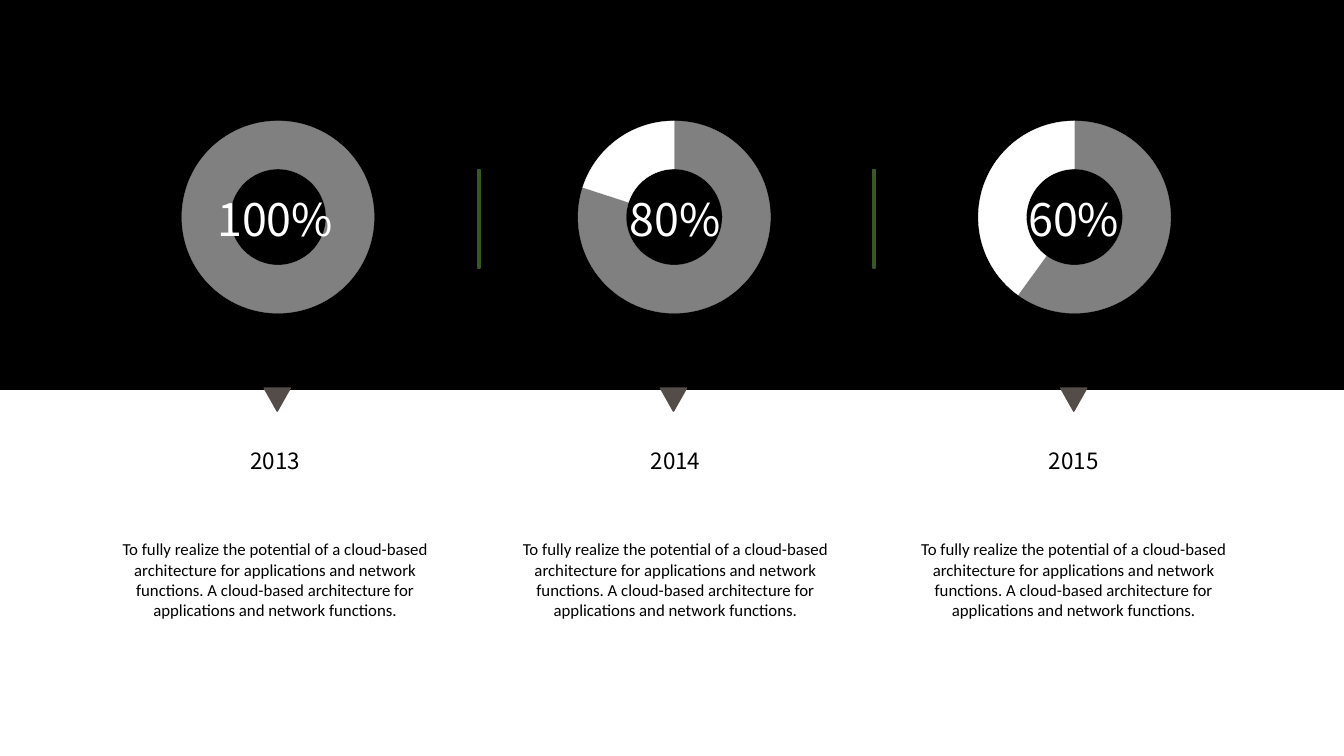
from lxml import etree
from pptx import Presentation
from pptx.chart.data import CategoryChartData
from pptx.dml.color import RGBColor
from pptx.enum.chart import XL_CHART_TYPE as CT
from pptx.enum.shapes import MSO_SHAPE as SHAPE
from pptx.enum.text import MSO_AUTO_SIZE, PP_ALIGN
from pptx.oxml.ns import qn
from pptx.util import Inches, Pt

BODY = ("To fully realize the potential of a cloud-based architecture for "
        "applications and network functions. A cloud-based architecture for "
        "applications and network functions.")
# year, percent, centre of the ring, centre of the text
COLUMNS = [("2013", 100, 2.76, 2.73),
           ("2014", 80, 6.69, 6.7),
           ("2015", 60, 10.66, 10.65)]
DIVIDERS = [4.74, 8.66]
PLOT = {"x": 0.163, "y": 0.092, "w": 0.672, "h": 0.799}
SLIDE_W, SLIDE_H = 13.33, 7.5

THEME = {
    "black": "000000", "white": "FFFFFF", "ring": "808080",
    "marker": "534C49", "divider": "FD729B", "divider_line": "385723",
    "body_font": "Calibri", "head_font": "Noto Sans CJK SC",
    "percent_pt": 32, "year_pt": 16, "body_pt": 12, "chart_pt": 10,
}


def rgb(name):
    return RGBColor.from_string(THEME[name])


def add_block(slide, kind, x, y, w, h, fill, line):
    s = slide.shapes.add_shape(kind, Inches(x), Inches(y), Inches(w), Inches(h))
    s.shadow.inherit = False
    s.fill.solid()
    s.fill.fore_color.rgb = rgb(fill)
    s.line.color.rgb = rgb(line)
    s.line.width = Pt(1)
    return s


def add_text(slide, text, *, center, y, w, h, size, font, color="black"):
    s = slide.shapes.add_textbox(Inches(center - w / 2), Inches(y), Inches(w), Inches(h))
    tf = s.text_frame
    tf.word_wrap = True
    tf.auto_size = MSO_AUTO_SIZE.SHAPE_TO_FIT_TEXT
    p = tf.paragraphs[0]
    p.alignment = PP_ALIGN.CENTER
    r = p.add_run()
    r.text = text
    r.font.size = Pt(THEME[size])
    r.font.name = THEME[font]
    r.font.color.rgb = rgb(color)


def set_plot_layout(chart):
    """Fix the inner plot area to the fractions in PLOT."""
    area = chart._chartSpace.chart.plotArea
    for old in area.findall(qn("c:layout")):
        area.remove(old)
    layout = etree.Element(qn("c:layout"))
    manual = etree.SubElement(layout, qn("c:manualLayout"))
    settings = [("layoutTarget", "inner"), ("xMode", "edge"), ("yMode", "edge"), *PLOT.items()]
    for tag, val in settings:
        etree.SubElement(manual, qn(f"c:{tag}")).set("val", str(val))
    area.insert(0, layout)


def add_ring(slide, percent, center):
    data = CategoryChartData()
    data.categories = ["1", "2"]
    data.add_series("Series 1", (percent, 100 - percent))
    w, h = 2.84, 2.39
    chart = slide.shapes.add_chart(CT.DOUGHNUT, Inches(center - w / 2), Inches(0.98),
                                   Inches(w), Inches(h), data).chart
    chart.has_legend = False
    chart.has_title = False
    chart.font.name = THEME["body_font"]
    chart.font.size = Pt(THEME["chart_pt"])
    chart.font.color.rgb = rgb("black")
    plot = chart.plots[0]
    plot.has_data_labels = False
    plot.vary_by_categories = True
    plot._element.find(qn("c:holeSize")).set("val", "90")
    set_plot_layout(chart)
    rest = "white" if percent < 100 else "ring"
    for i, color in enumerate(("ring", rest)):
        fmt = plot.series[0].points[i].format
        fmt.fill.solid()
        fmt.fill.fore_color.rgb = rgb(color)
        fmt.line.color.rgb = rgb(color)
        fmt.line.width = Pt(0.25)


def main():
    prs = Presentation()
    prs.slide_width, prs.slide_height = Inches(SLIDE_W), Inches(SLIDE_H)
    slide = prs.slides.add_slide(prs.slide_layouts[6])

    add_block(slide, SHAPE.RECTANGLE, 0, 0, SLIDE_W, 3.86, "black", "black")
    for x in DIVIDERS:
        add_block(slide, SHAPE.RECTANGLE, x, 1.68, 0.02, 0.98, "divider", "divider_line")

    for year, percent, ring_x, text_x in COLUMNS:
        add_ring(slide, percent, ring_x)
        add_text(slide, f"{percent}%", center=text_x, y=1.85, w=1.76, h=0.64,
                 size="percent_pt", font="head_font", color="white")
        marker = add_block(slide, SHAPE.ISOSCELES_TRIANGLE, ring_x - 0.14, 3.85, 0.26, 0.23,
                           "marker", "marker")
        marker._element.spPr.xfrm.set("flipV", "1")
        add_text(slide, year, center=text_x, y=4.39, w=1.04, h=0.37,
                 size="year_pt", font="head_font")
        add_text(slide, BODY, center=text_x, y=5.3, w=3.64, h=0.91,
                 size="body_pt", font="body_font")

    prs.save("out.pptx")


if __name__ == "__main__":
    main()
